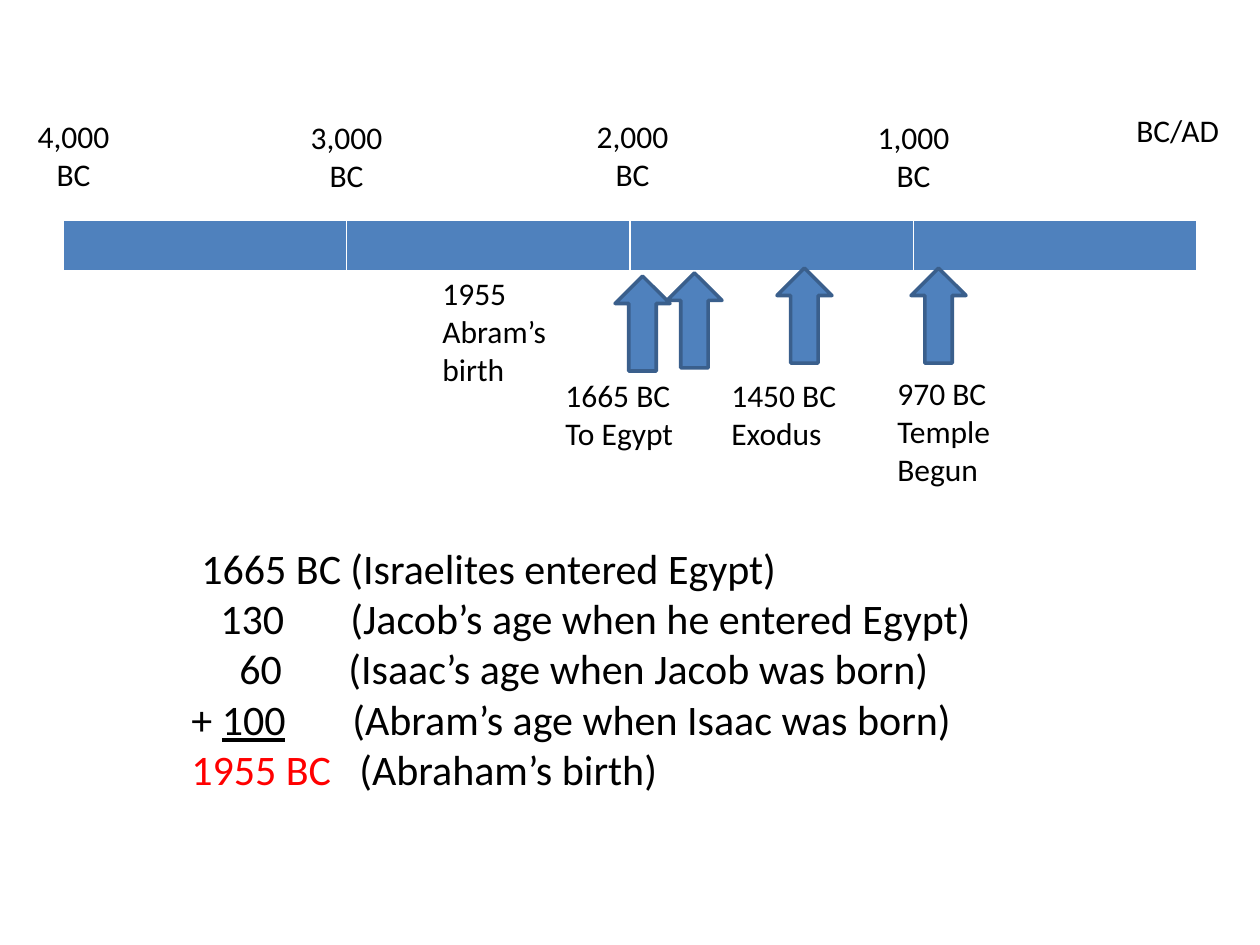
from lxml import etree
from pptx import Presentation
from pptx.dml.color import RGBColor
from pptx.enum.shapes import MSO_SHAPE
from pptx.enum.text import MSO_AUTO_SIZE, PP_ALIGN
from pptx.oxml.ns import qn
from pptx.util import Emu, Pt

UP_ARROW = MSO_SHAPE.UP_ARROW
LEFT, CENTER = PP_ALIGN.LEFT, PP_ALIGN.CENTER
FIT_SHAPE = MSO_AUTO_SIZE.SHAPE_TO_FIT_TEXT
FONT = "Calibri"
BLUE, DARK_BLUE, WHITE, BLACK, RED = "4F81BD", "3A5F8C", "FFFFFF", "000000", "FF0000"

DATES = [
    ("4,000", 21, 111),
    ("3,000", 294, 112),
    ("2,000", 580, 111),
    ("1,000", 861, 112),
]
EVENTS = [
    (["970 BC", "Temple", "Begun"], 885, 368, 158, 127),
    (["1450 BC", "Exodus"], 719, 370, 136, 89),
    (["1665 BC", "To Egypt"], 553, 370, 158, 89),
    (["1955", "Abram’s", "birth"], 430, 268, 185, 127),
]
ARROWS = [(911, 268), (777, 268), (667, 273), (615, 276)]
SUM_ROWS = [
    ([("\t1665 BC\t(Israelites entered Egypt)", {})], [10, 159]),
    ([("\t130\t(Jacob’s age when he entered Egypt)", {})], [29, 159]),
    ([("\t60\t(Isaac’s age when Jacob was born)", {})], [48, 157]),
    ([("+ ", {}), ("100", {"underline": True}),
      ("\t(Abram’s age when Isaac was born)", {})], [161]),
    ([("1955 BC", {"color": RED}), ("\t(Abraham’s birth)", {})], [168]),
]


def px(length):
    return Emu(round(length * 914400 / 126))


def rgb(color):
    return RGBColor.from_string(color)


def add_tabs(paragraph, stops):
    tab_list = etree.SubElement(paragraph._p.get_or_add_pPr(), qn("a:tabLst"))
    for stop in stops:
        etree.SubElement(tab_list, qn("a:tab"), pos=str(px(stop)), algn="l")


def add_text(slide, rows, left, top, width, height, size=18, align=LEFT, wrap=True):
    box = slide.shapes.add_textbox(px(left), px(top), px(width), px(height))
    frame = box.text_frame
    frame.word_wrap = wrap
    frame.auto_size = FIT_SHAPE
    for index, (runs, stops) in enumerate(rows):
        paragraph = frame.add_paragraph() if index else frame.paragraphs[0]
        paragraph.alignment = align
        if stops:
            add_tabs(paragraph, stops)
        for text, style in runs:
            run = paragraph.add_run()
            run.text = text
            run.font.name = FONT
            run.font.size = Pt(size)
            run.font.underline = style.get("underline")
            run.font.color.rgb = rgb(style.get("color", BLACK))


def plain_rows(lines):
    return [([(line, {})], []) for line in lines]


def add_borders(cell):
    properties = cell._tc.get_or_add_tcPr()
    for index, (side, width) in enumerate([("L", 1), ("R", 1), ("T", 1), ("B", 3)]):
        border = etree.Element(qn(f"a:ln{side}"), w=str(Pt(width)))
        fill = etree.SubElement(border, qn("a:solidFill"))
        etree.SubElement(fill, qn("a:srgbClr"), val=WHITE)
        properties.insert(index, border)


def add_timeline(slide):
    frame = slide.shapes.add_table(1, 4, px(63), px(220), px(1134), px(52))
    for cell in frame.table.iter_cells():
        cell.fill.solid()
        cell.fill.fore_color.rgb = rgb(BLUE)
        add_borders(cell)


def add_arrow(slide, left, top):
    arrow = slide.shapes.add_shape(UP_ARROW, px(left), px(top), px(55), px(95))
    arrow.shadow.inherit = False
    arrow.fill.solid()
    arrow.fill.fore_color.rgb = rgb(BLUE)
    arrow.line.color.rgb = rgb(DARK_BLUE)
    arrow.line.width = Pt(2)


def main():
    presentation = Presentation()
    presentation.slide_width, presentation.slide_height = px(1260), px(945)
    slide = presentation.slides.add_slide(presentation.slide_layouts[6])
    add_timeline(slide)
    add_text(slide, plain_rows(["BC/AD"]), 1124, 105, 116, 50, wrap=False)
    for date, left, top in DATES:
        add_text(slide, plain_rows([date, "BC"]), left, top, 105, 89,
                 align=CENTER, wrap=False)
    for lines, left, top, width, height in EVENTS:
        add_text(slide, plain_rows(lines), left, top, width, height)
    for left, top in ARROWS:
        add_arrow(slide, left, top)
    add_text(slide, SUM_ROWS, 179, 536, 966, 267, size=24)
    presentation.save("out.pptx")


if __name__ == "__main__":
    main()
